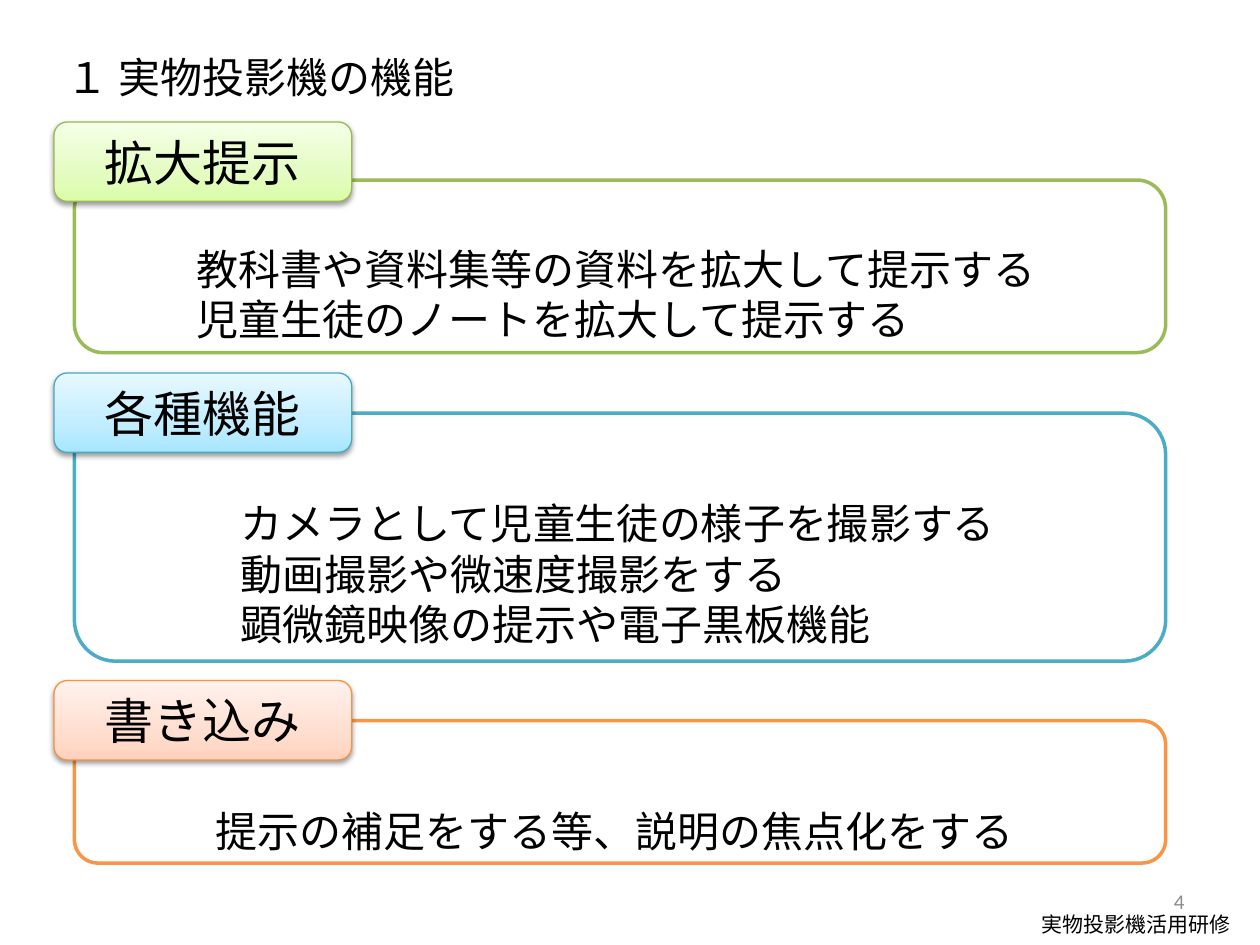
from dataclasses import dataclass

from lxml import etree
from pptx import Presentation
from pptx.dml.color import RGBColor
from pptx.enum.shapes import MSO_SHAPE
from pptx.enum.text import MSO_ANCHOR, MSO_AUTO_SIZE, PP_ALIGN
from pptx.oxml.ns import qn
from pptx.util import Cm, Pt

ROUNDED = MSO_SHAPE.ROUNDED_RECTANGLE
LEFT, CENTER, RIGHT = PP_ALIGN.LEFT, PP_ALIGN.CENTER, PP_ALIGN.RIGHT
MIDDLE, BOTTOM = MSO_ANCHOR.MIDDLE, MSO_ANCHOR.BOTTOM
NO_AUTOFIT = MSO_AUTO_SIZE.NONE


@dataclass(frozen=True)
class Theme:
    font: str = "Noto Sans CJK JP"
    number_font: str = "Calibri"
    text: str = "000000"
    muted: str = "8C8C8C"
    paper: str = "FFFFFF"
    title_size: int = 24
    body_size: int = 24
    label_size: int = 28
    footer_size: int = 12
    body_leading: float = 28.8


@dataclass(frozen=True)
class Section:
    label: str
    lines: tuple
    label_top: float
    frame_top: float
    frame_height: float
    indent: float
    frame_line: str
    label_line: str
    gradient: tuple


SECTIONS = (
    Section("拡大提示",
            ("教科書や資料集等の資料を拡大して提示する", "児童生徒のノートを拡大して提示する"),
            2.46, 3.63, 3.48, 2.3, "9BBB59", "98B955", ("DAFDA7", "E4FCC2", "F5FFE7")),
    Section("各種機能",
            ("カメラとして児童生徒の様子を撮影する", "動画撮影や微速度撮影をする",
             "顕微鏡映像の提示や電子黒板機能"),
            7.52, 8.33, 5, 3.1, "4BACC6", "46AAC5", ("A7E6FF", "C1EDFF", "E7F8FF")),
    Section("書き込み", ("提示の補足をする等、説明の焦点化をする",),
            13.72, 14.53, 2.87, 2.7, "F79646", "F69240", ("FFD2BD", "FFDED0", "FFF2ED")),
)


class SlideBuilder:
    def __init__(self, slide, theme):
        self.slide = slide
        self.theme = theme

    def format_run(self, r, size, color, font):
        r.font.size = Pt(size)
        r.font.name = font
        r.font.color.rgb = RGBColor.from_string(color)
        etree.SubElement(r._r.rPr, qn("a:ea")).set("typeface", font)

    def set_text(self, sp, text, size, align, anchor=MIDDLE, color=None, font=None):
        tf = sp.text_frame
        tf.text = text
        tf.word_wrap = True
        tf.auto_size = NO_AUTOFIT
        tf.vertical_anchor = anchor
        for p in tf.paragraphs:
            p.alignment = align
            for r in p.runs:
                self.format_run(r, size, color or self.theme.text, font or self.theme.font)
        return tf

    def title(self, text, left, top, width, height):
        sp = self.slide.shapes.title
        sp.left, sp.top, sp.width, sp.height = Cm(left), Cm(top), Cm(width), Cm(height)
        self.set_text(sp, text, self.theme.title_size, LEFT)

    def rounded(self, group, left, top, width, height, line, weight):
        sp = group.shapes.add_shape(ROUNDED, Cm(left), Cm(top), Cm(width), Cm(height))
        sp.shadow.inherit = False
        sp.line.color.rgb = RGBColor.from_string(line)
        sp.line.width = Pt(weight)
        return sp

    def frame(self, group, section):
        sp = self.rounded(group, 1.5, section.frame_top, 22, section.frame_height,
                          section.frame_line, 2)
        sp.fill.solid()
        sp.fill.fore_color.rgb = RGBColor.from_string(self.theme.paper)
        tf = self.set_text(sp, "\n".join(section.lines), self.theme.body_size, LEFT, BOTTOM)
        tf.margin_left = Cm(section.indent)
        tf.margin_bottom = 0
        for p in tf.paragraphs:
            p.line_spacing = Pt(self.theme.body_leading)

    def label(self, group, section):
        sp = self.rounded(group, 1.09, section.label_top, 6, 1.6, section.label_line, 0.75)
        self.gradient(sp, section.gradient)
        self.drop_shadow(sp)
        tf = self.set_text(sp, section.label, self.theme.label_size, CENTER)
        tf.margin_top = tf.margin_bottom = 0

    def gradient(self, sp, colors):
        sp.fill.gradient()
        sp.fill.gradient_angle = 90
        stops = sp.element.spPr.find(qn("a:gradFill")).find(qn("a:gsLst"))
        for old in list(stops):
            stops.remove(old)
        for position, color in zip((0, 35, 100), colors):
            stop = etree.SubElement(stops, qn("a:gs"), pos=str(position * 1000))
            etree.SubElement(stop, qn("a:srgbClr"), val=color)

    def drop_shadow(self, sp):
        effects = sp.element.spPr.find(qn("a:effectLst"))
        shadow = etree.SubElement(effects, qn("a:outerShdw"), blurRad=str(int(Pt(3.1))),
                                  dist=str(int(Pt(1.6))), dir="5400000", rotWithShape="0")
        color = etree.SubElement(shadow, qn("a:srgbClr"), val=self.theme.text)
        etree.SubElement(color, qn("a:alpha"), val="38000")

    def section(self, section):
        group = self.slide.shapes.add_group_shape()
        self.frame(group, section)
        self.label(group, section)

    def textbox(self, text, left, top, width, height, align, color=None, font=None):
        sp = self.slide.shapes.add_textbox(Cm(left), Cm(top), Cm(width), Cm(height))
        self.set_text(sp, text, self.theme.footer_size, align, color=color, font=font)
        return sp

    def page_number(self, number, left, top, width, height):
        sp = self.textbox(number, left, top, width, height, RIGHT,
                          self.theme.muted, self.theme.number_font)
        r = sp.text_frame.paragraphs[0].runs[0]._r
        field = etree.Element(qn("a:fld"), type="slidenum",
                              id="{B6F15528-21DE-4FAA-801E-634DDDAF4B2B}")
        r.addprevious(field)
        for child in list(r):
            field.append(child)
        r.getparent().remove(r)


def main():
    prs = Presentation()
    prs.slide_width, prs.slide_height = Cm(25.4), Cm(19.05)
    prs.element.set("firstSlideNum", "4")
    s = prs.slides.add_slide(prs.slide_layouts[5])
    builder = SlideBuilder(s, Theme())
    builder.title("１ 実物投影機の機能", 1.09, 0.91, 24.31, 1.27)
    for section in SECTIONS:
        builder.section(section)
    builder.textbox("実物投影機活用研修", 20.4, 18.26, 5, 0.76, CENTER)
    builder.page_number("4", 18.2, 17.65, 5.93, 1.02)
    prs.save("out.pptx")


if __name__ == "__main__":
    main()
